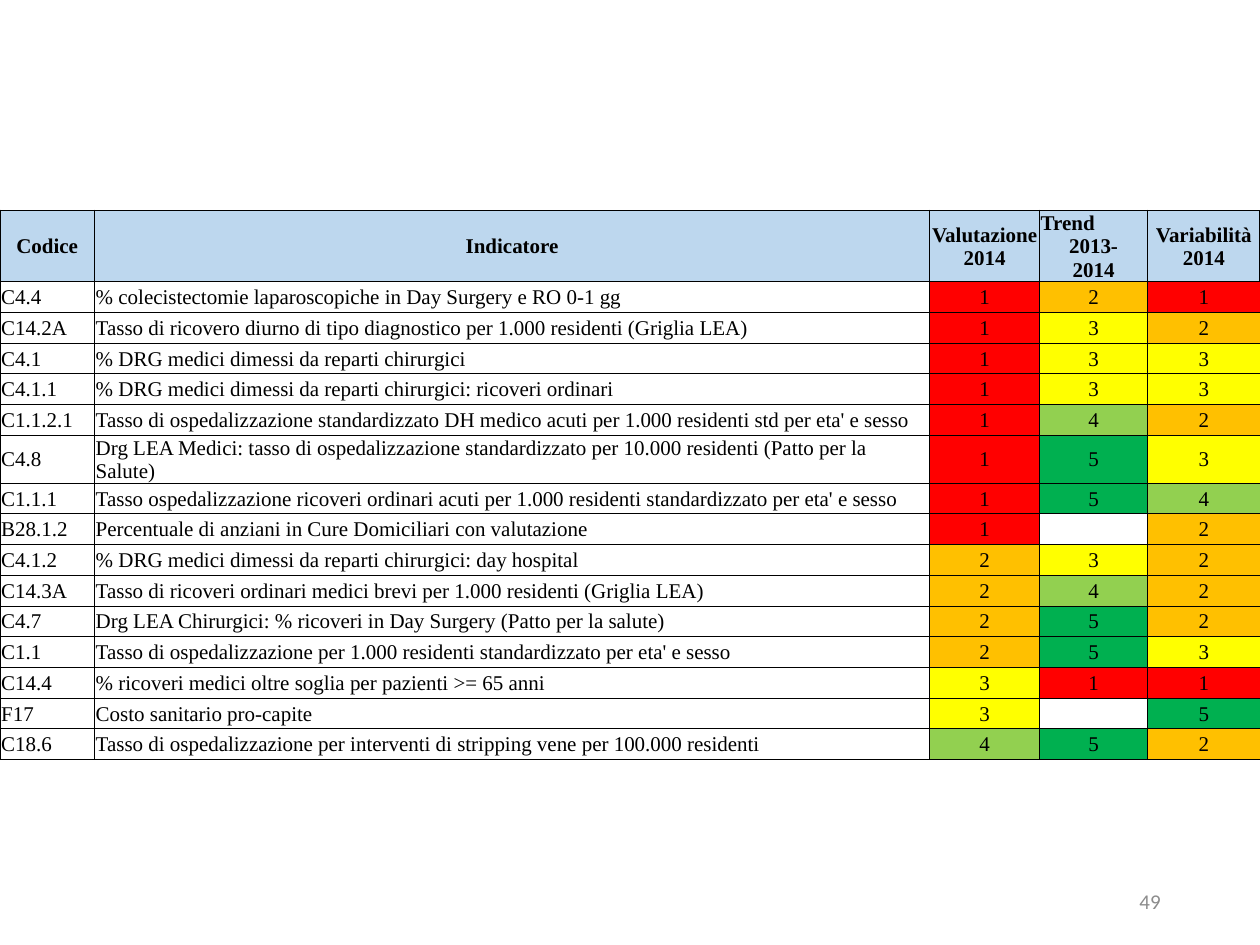
from lxml import etree
from pptx import Presentation
from pptx import util as u
from pptx.dml.color import RGBColor
from pptx.enum import text
from pptx.oxml.ns import qn

# Content: code, indicator, then scores for evaluation, trend and variability
HEADERS = [["Codice"], ["Indicatore"], ["Valutazione 2014"],
           ["Trend", "2013-\v2014"], ["Variabilità 2014"]]
INDICATORS = [
    ("C4.4", "% colecistectomie laparoscopiche in Day Surgery e RO 0-1 gg", 1, 2, 1),
    ("C14.2A", "Tasso di ricovero diurno di tipo diagnostico per 1.000 residenti (Griglia LEA)", 1, 3, 2),
    ("C4.1", "% DRG medici dimessi da reparti chirurgici", 1, 3, 3),
    ("C4.1.1", "% DRG medici dimessi da reparti chirurgici: ricoveri ordinari", 1, 3, 3),
    ("C1.1.2.1", "Tasso di ospedalizzazione standardizzato DH medico acuti per 1.000 residenti "
                 "std per eta' e sesso", 1, 4, 2),
    ("C4.8", "Drg LEA Medici: tasso di ospedalizzazione standardizzato per 10.000 residenti "
             "(Patto per la Salute)", 1, 5, 3),
    ("C1.1.1", "Tasso ospedalizzazione ricoveri ordinari acuti per 1.000 residenti "
               "standardizzato per eta' e sesso", 1, 5, 4),
    ("B28.1.2", "Percentuale di anziani in Cure Domiciliari con valutazione", 1, None, 2),
    ("C4.1.2", "% DRG medici dimessi da reparti chirurgici: day hospital", 2, 3, 2),
    ("C14.3A", "Tasso di ricoveri ordinari medici brevi per 1.000 residenti (Griglia LEA)", 2, 4, 2),
    ("C4.7", "Drg LEA Chirurgici: % ricoveri in Day Surgery (Patto per la salute)", 2, 5, 2),
    ("C1.1", "Tasso di ospedalizzazione per 1.000 residenti standardizzato per eta' e sesso", 2, 5, 3),
    ("C14.4", "% ricoveri medici oltre soglia per pazienti >= 65 anni", 3, 1, 1),
    ("F17", "Costo sanitario pro-capite", 3, None, 5),
    ("C18.6", "Tasso di ospedalizzazione per interventi di stripping vene per 100.000 residenti", 4, 5, 2),
]
PAGE_NUMBER = "49"

# Style
BLACK = RGBColor(0x00, 0x00, 0x00)
GREY = RGBColor(0x8C, 0x8C, 0x8C)
HEADER_BLUE = RGBColor(0xBD, 0xD7, 0xEE)
SCORE_COLORS = {
    1: RGBColor(0xFF, 0x00, 0x00),
    2: RGBColor(0xFF, 0xC0, 0x00),
    3: RGBColor(0xFF, 0xFF, 0x00),
    4: RGBColor(0x92, 0xD0, 0x50),
    5: RGBColor(0x00, 0xB0, 0x50),
}
LEFT, CENTER = text.PP_ALIGN.LEFT, text.PP_ALIGN.CENTER
FONT_SIZE = u.Pt(12)

# Grid in inches
TABLE_TOP = 1.67
COLUMN_WIDTHS = [0.75, 6.63, 0.87, 0.86, 0.89]
HEADER_HEIGHT, ROW_HEIGHT, TWO_LINE_HEIGHT = 0.56, 0.244, 0.38
TWO_LINE_CODE = "C4.8"
ROW_HEIGHTS = [HEADER_HEIGHT] + [
    TWO_LINE_HEIGHT if row[0] == TWO_LINE_CODE else ROW_HEIGHT for row in INDICATORS]


def style_paragraph(paragraph, font_name, color, alignment, bold=False):
    paragraph.alignment = alignment
    font = paragraph.font
    font.name, font.size, font.bold = font_name, FONT_SIZE, bold
    font.color.rgb = color


def set_borders(cell, thick_sides):
    properties = cell._tc.get_or_add_tcPr()
    for position, side in enumerate("LRTB"):
        width = u.Pt(1 if side in thick_sides else 0.5)
        line = etree.Element(qn(f"a:ln{side}"), w=str(int(width)))
        fill = etree.SubElement(line, qn("a:solidFill"))
        etree.SubElement(fill, qn("a:srgbClr"), val=str(BLACK))
        properties.insert(position, line)


def fill_cell(cell, lines, alignments, fill=None, bold=False, thick_sides=""):
    cell.margin_left = cell.margin_right = cell.margin_top = u.Inches(0.01)
    cell.margin_bottom = 0
    cell.vertical_anchor = text.MSO_ANCHOR.MIDDLE
    cell.text_frame.text = "\n".join(lines)
    for paragraph, alignment in zip(cell.text_frame.paragraphs, alignments):
        style_paragraph(paragraph, "Times New Roman", BLACK, alignment, bold)
        if not paragraph.runs:  # an empty cell must not stretch its row
            etree.SubElement(paragraph._p, qn("a:endParaRPr"), sz=str(int(FONT_SIZE.pt * 100)))
    if fill is None:
        cell.fill.background()
    else:
        cell.fill.solid()
        cell.fill.fore_color.rgb = fill
    set_borders(cell, thick_sides)


def add_indicator_table(slide):
    table = slide.shapes.add_table(
        len(ROW_HEIGHTS), len(COLUMN_WIDTHS), 0, u.Inches(TABLE_TOP),
        u.Inches(sum(COLUMN_WIDTHS)), u.Inches(sum(ROW_HEIGHTS))).table
    table.horz_banding = False
    for column, width in zip(table.columns, COLUMN_WIDTHS):
        column.width = u.Inches(width)
    for row, height in zip(table.rows, ROW_HEIGHTS):
        row.height = u.Inches(height)

    # Header row, with a heavier outer edge
    outer_sides = {0: "TL", len(HEADERS) - 1: "TR"}
    for index, lines in enumerate(HEADERS):
        alignments = [CENTER] if len(lines) == 1 else [LEFT, CENTER]
        fill_cell(table.cell(0, index), lines, alignments, HEADER_BLUE, True,
                  outer_sides.get(index, "T"))

    # Indicator rows, with each score coloured by its value
    for row_index, (code, name, *scores) in enumerate(INDICATORS, start=1):
        for index, label in enumerate((code, name)):
            fill_cell(table.cell(row_index, index), [label], [LEFT])
        for index, score in enumerate(scores, start=2):
            label = "" if score is None else str(score)
            fill_cell(table.cell(row_index, index), [label], [CENTER], SCORE_COLORS.get(score))


def add_page_number(slide):
    box = slide.shapes.add_textbox(u.Inches(7.06), u.Inches(6.95), u.Inches(2.25), u.Inches(0.4))
    frame = box.text_frame
    frame.word_wrap = True
    frame.vertical_anchor = text.MSO_ANCHOR.MIDDLE
    frame.text = PAGE_NUMBER
    style_paragraph(frame.paragraphs[0], "Calibri", GREY, text.PP_ALIGN.RIGHT)


def main():
    presentation = Presentation()
    presentation.slide_width, presentation.slide_height = u.Inches(10), u.Inches(7.5)
    slide = presentation.slides.add_slide(presentation.slide_layouts[6])
    add_indicator_table(slide)
    add_page_number(slide)
    presentation.save("out.pptx")


if __name__ == "__main__":
    main()
